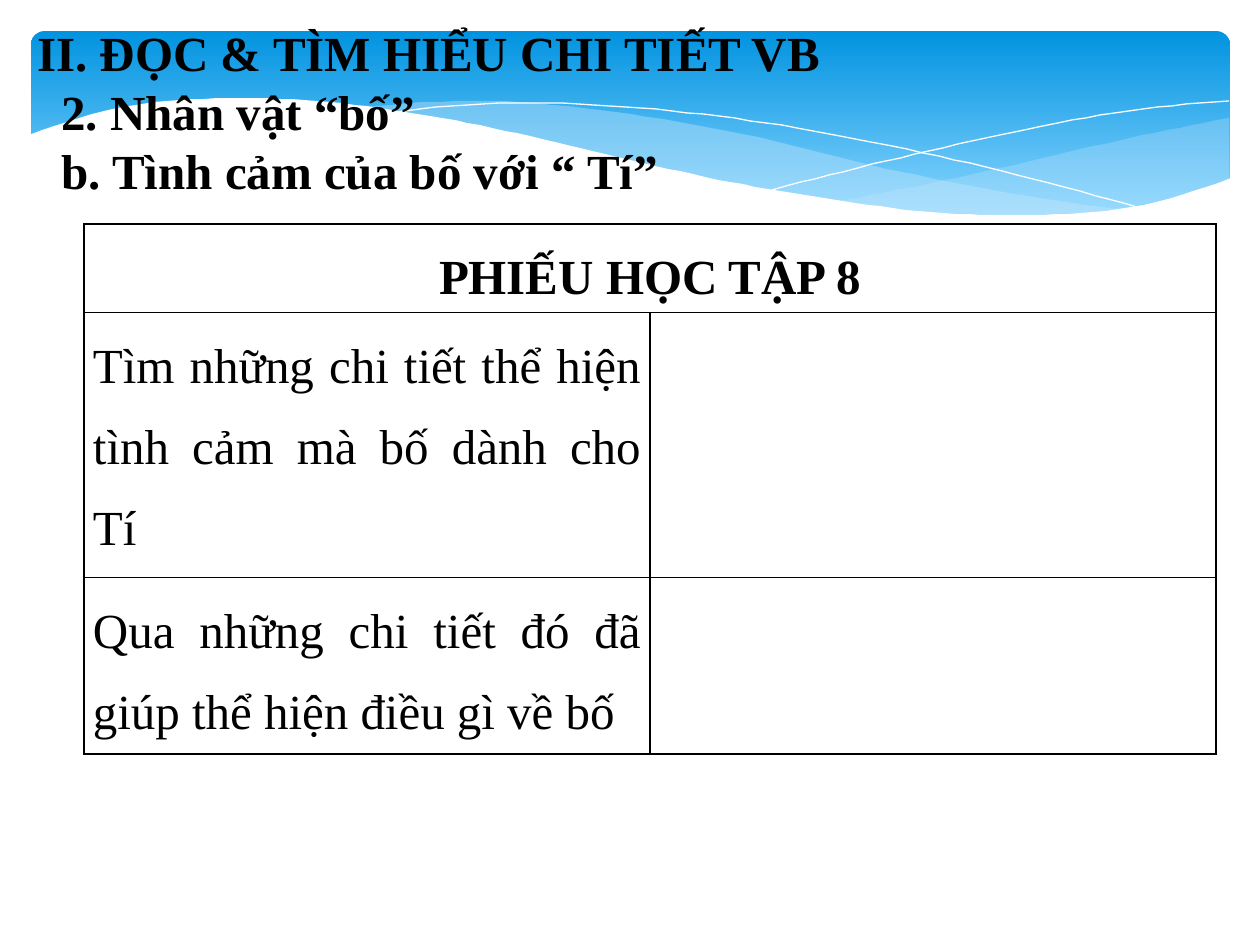
import pptx
import pptx.util
import pptx.dml.color
import pptx.enum.shapes
import pptx.enum.text
import pptx.oxml
import pptx.oxml.ns

PX = 914400 / 126
STEPS = 8
BLACK, WHITE, PALE = "000000", "FFFFFF", "C6E7FC"
ALIGN = pptx.enum.text.PP_ALIGN
NS = pptx.oxml.ns.nsdecls("a")


def color(code):
    return pptx.dml.color.RGBColor.from_string(code)


def write(frame, text, bold=True, align=ALIGN.LEFT, space=1.0):
    frame.word_wrap = True
    for i, line in enumerate(text.split("\n")):
        para = frame.paragraphs[0] if i == 0 else frame.add_paragraph()
        para.alignment = align
        para.line_spacing = space
        run = para.add_run()
        run.text = line
        run.font.name = "Times New Roman"
        run.font.size = pptx.util.Pt(28)
        run.font.bold = bold
        run.font.color.rgb = color(BLACK)


deck = pptx.Presentation()
deck.slide_width = round(1260 * PX)
deck.slide_height = round(945 * PX)
slide = deck.slides.add_slide(deck.slide_layouts[6])
shapes = slide.shapes

banner = shapes.add_shape(
    pptx.enum.shapes.MSO_SHAPE.ROUNDED_RECTANGLE,
    *[round(v * PX) for v in (31, 31, 1199, 197)])
banner.adjustments[0] = 0.07
banner.shadow.inherit = False
banner.line.fill.background()
banner.fill.gradient()
banner.fill.gradient_angle = 270
for stop, (pos, code) in zip(banner.fill.gradient_stops,
                             [(0, "0293E0"), (0.9, "83D3FE")]):
    stop.position = pos
    stop.color.rgb = color(code)

swell = {"left": 833, "right": 1229, "alpha": 29, "fill": PALE,
         "top": [202, 183, 161, 138, 118],
         "base": [202, 213, 217, 207, 179]}
ribbon = {"left": 360, "right": 1125, "alpha": 40, "fill": PALE,
          "top": [108, 101, 112, 134, 165, 191, 210],
          "base": [108, 129, 158, 187, 207, 217, 210]}
fall = {"left": 389, "right": 1143,
        "top": [113, 103, 108, 123, 146, 175, 209]}
rise = {"left": 772, "right": 1229,
        "top": [190, 161, 135, 113, 101]}
front = {"left": 29, "right": 1231, "alpha": 100, "fill": WHITE,
         "top": [135, 106, 98, 102, 116, 136, 160, 182, 199, 212, 215, 207, 178],
         "base": [282, 282, 282]}

for wave in (swell, ribbon, fall, rise, front):
    left, right = wave["left"], wave["right"]
    filled = "base" in wave
    edges = []
    for side in ("top", "base") if filled else ("top",):
        ys = wave[side]
        first = 3 * ys[0] - 3 * ys[1] + ys[2]
        last = 3 * ys[-1] - 3 * ys[-2] + ys[-3]
        knots = [first, *ys, last]
        spans = len(ys) - 1
        edge = []
        for n in range(spans * STEPS + 1):
            i = min(n // STEPS, spans - 1)
            t = n / STEPS - i
            a, b, c, d = knots[i:i + 4]
            y = b + t / 2 * (c - a + t * (2 * a - 5 * b + 4 * c - d
                                          + t * (3 * b - a - 3 * c + d)))
            edge.append((left + (right - left) * n / (spans * STEPS), y))
        edges.append(edge)
    points = edges[0] + (edges[1][::-1] if filled else [])
    pen = shapes.build_freeform(*points[0], scale=PX)
    pen.add_line_segments(points[1:], close=filled)
    shape = pen.convert_to_shape()
    shape.shadow.inherit = False
    if filled:
        shape.line.fill.background()
        shape.fill.solid()
        shape.fill.fore_color.rgb = color(wave["fill"])
        tint = shape.element.spPr.find(".//" + pptx.oxml.ns.qn("a:srgbClr"))
        tint.append(pptx.oxml.parse_xml(
            f'<a:alpha {NS} val="{wave["alpha"] * 1000}"/>'))
    else:
        shape.fill.background()
        shape.line.color.rgb = color(WHITE)
        shape.line.width = 0

for place, text in [
        ((25, 16, 814, 72), "II. ĐỌC & TÌM HIỂU CHI TIẾT VB"),
        ((49, 75, 764, 131), "2. Nhân vật “bố”\nb. Tình cảm của bố với “ Tí”")]:
    box = shapes.add_textbox(*[round(v * PX) for v in place])
    write(box.text_frame, text)

table = shapes.add_table(3, 2, *[round(v * PX) for v in (84, 224, 1132, 529)]).table
for col in table.columns:
    col.width = round(566 * PX)
for row, high in zip(table.rows, (88, 265, 176)):
    row.height = round(high * PX)
table.cell(0, 0).merge(table.cell(0, 1))
for cell in table.iter_cells():
    cell.margin_left = cell.margin_right = round(9 * PX)
    cell.margin_top = cell.margin_bottom = 0
    props = cell._tc.get_or_add_tcPr()
    for side in ("lnL", "lnR", "lnT", "lnB"):
        props.append(pptx.oxml.parse_xml(
            f'<a:{side} {NS} w="12700"><a:solidFill><a:srgbClr val="{BLACK}"/>'
            f'</a:solidFill></a:{side}>'))
    cell.fill.background()

write(table.cell(0, 0).text_frame, "PHIẾU HỌC TẬP 8", align=ALIGN.CENTER, space=1.5)
for i, text in enumerate([
        "Tìm những chi tiết thể hiện tình cảm mà bố dành cho Tí",
        "Qua những chi tiết đó đã giúp thể hiện điều gì về bố"], 1):
    write(table.cell(i, 0).text_frame, text, bold=False,
          align=ALIGN.JUSTIFY, space=1.5)

deck.save("out.pptx")
